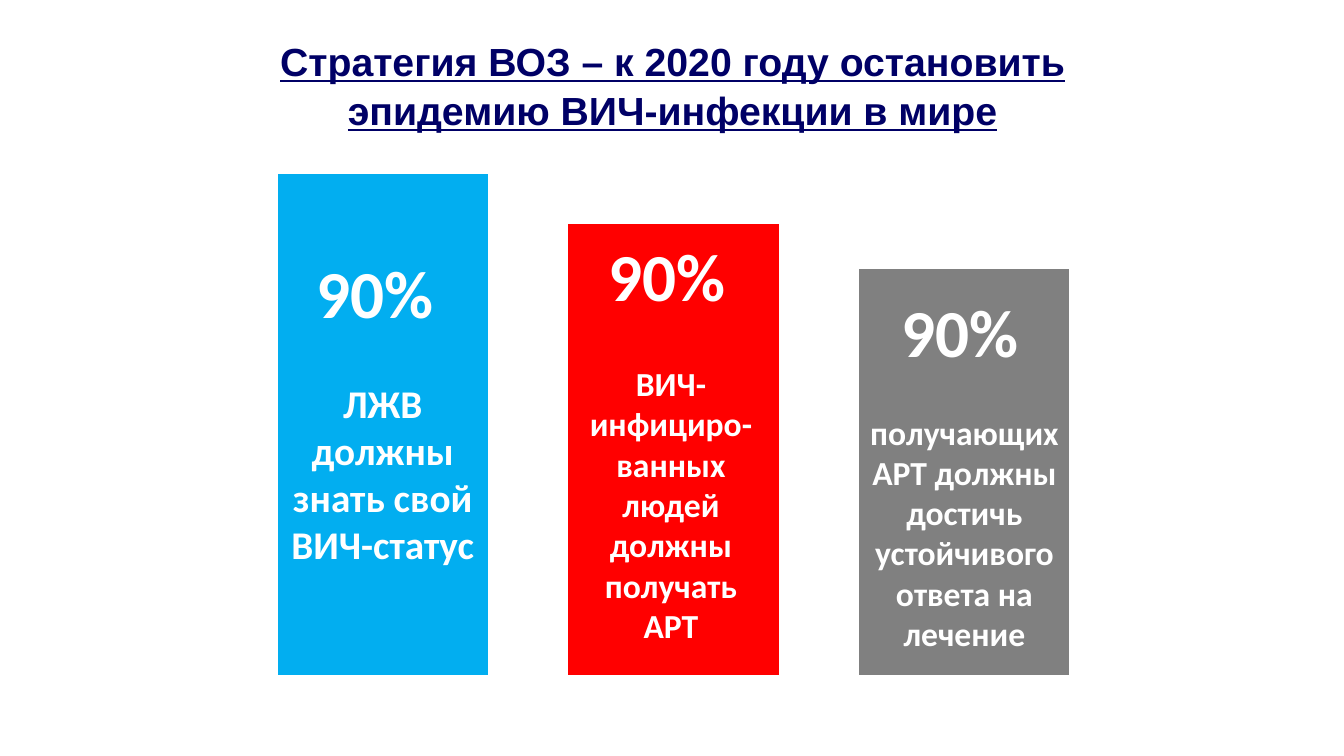
from lxml import etree
from pptx import Presentation
from pptx.chart.data import CategoryChartData
from pptx.dml.color import RGBColor
from pptx.enum.chart import XL_CHART_TYPE
from pptx.enum.text import MSO_ANCHOR, MSO_AUTO_SIZE, PP_ALIGN
from pptx.oxml import parse_xml
from pptx.oxml.ns import nsdecls, qn
from pptx.util import Inches, Pt

WHITE, NAVY, BLACK = "FFFFFF", "000066", "000000"
BAR_COLORS = ["02AEF0", "FF0000", "808080"]
SHARES = [90, 81, 73]

# Box, size of the space after "90%", gap below it, text size, paragraphs
GOALS = [
    ((2.75, 2.44, 2.09, 3.27), 48, 34, 28, ["ЛЖВ должны знать свой ВИЧ-статус"]),
    ((5.61, 2.28, 2.09, 4.21), 28, 34, 24,
     ["ВИЧ-инфициро-", "ванных людей должны получать АРТ"]),
    ((8.52, 2.83, 2.09, 3.74), 28, 29, 24,
     ["получающих АРТ должны достичь устойчивого ответа на лечение"]),
]


def rgb(color):
    return RGBColor.from_string(color)


def set_font(font, name, size, color, bold=False):
    font.name, font.size, font.bold = name, Pt(size), bold
    font.color.rgb = rgb(color)


def add_title(slide, box, text):
    sp = slide.shapes.title
    sp.left, sp.top, sp.width, sp.height = map(Inches, box)
    tf = sp.text_frame
    tf.text = text
    tf.auto_size = MSO_AUTO_SIZE.NONE
    tf.vertical_anchor = MSO_ANCHOR.MIDDLE
    p = tf.paragraphs[0]
    p.alignment = PP_ALIGN.CENTER
    p.line_spacing = 1.04
    set_font(p.font, "Arial", 28, NAVY, bold=True)
    p.font.underline = True


def add_bars(slide, box):
    data = CategoryChartData(number_format="General")
    data.categories = ["1", "2", "3"]
    data.add_series("Series 1", SHARES)
    data.add_series("Series 2", [100 - share for share in SHARES])
    chart = slide.shapes.add_chart(
        XL_CHART_TYPE.COLUMN_STACKED_100, *map(Inches, box), data).chart
    chart.has_title = chart.has_legend = False
    set_font(chart.font, "Calibri", 10, BLACK)

    # Hidden axes
    for axis in (chart.category_axis, chart.value_axis):
        axis.visible = False
        axis.has_major_gridlines = False
    chart.value_axis.tick_labels.number_format = "0%"
    chart.value_axis.tick_labels.number_format_is_linked = False

    # Coloured shares, invisible remainders
    plot = chart.plots[0]
    plot.gap_width, plot.overlap, plot.vary_by_categories = 38, 100, False
    share, rest = plot.series
    for i, color in enumerate(BAR_COLORS):
        fill = share.points[i].format.fill
        fill.solid()
        fill.fore_color.rgb = rgb(color)
    rest.format.fill.background()

    # Transparent chart area and fixed plot area
    root = chart.element.find(qn("c:chart"))
    root.addnext(parse_xml(
        f'<c:spPr {nsdecls("c", "a")}><a:noFill/><a:ln><a:noFill/></a:ln></c:spPr>'))
    plot_area = root.find(qn("c:plotArea"))
    layout = plot_area.find(qn("c:layout"))
    if layout is None:
        layout = etree.Element(qn("c:layout"))
        plot_area.insert(0, layout)
    manual = etree.SubElement(layout, qn("c:manualLayout"))
    for tag, val in [("layoutTarget", "inner"), ("xMode", "edge"), ("yMode", "edge"),
                     ("x", "0.02"), ("y", "0.02"), ("w", "0.96"), ("h", "0.96")]:
        etree.SubElement(manual, qn(f"c:{tag}")).set("val", val)


def add_goal(slide, box, space_size, gap, size, lines):
    tf = slide.shapes.add_textbox(*map(Inches, box)).text_frame
    tf.word_wrap = True
    p = tf.paragraphs[0]
    p.alignment = PP_ALIGN.CENTER
    p.space_after = Pt(gap)
    for text, run_size in (("90%", 48), (" ", space_size)):
        r = p.add_run()
        r.text = text
        set_font(r.font, "Calibri", run_size, WHITE, bold=True)
    for line in lines:
        p = tf.add_paragraph()
        p.text = line
        p.alignment = PP_ALIGN.CENTER
        set_font(p.font, "Calibri", size, WHITE, bold=True)


def main():
    prs = Presentation()
    prs.slide_width, prs.slide_height = Inches(13.33), Inches(7.5)
    slide = prs.slides.add_slide(prs.slide_layouts[5])
    add_title(slide, (1.67, 0.32, 10, 1.04),
              "Стратегия ВОЗ – к 2020 году остановить эпидемию ВИЧ-инфекции в мире")
    add_bars(slide, (2.18, 1.06, 9, 5.75))
    for goal in GOALS:
        add_goal(slide, *goal)
    prs.save("out.pptx")


if __name__ == "__main__":
    main()
